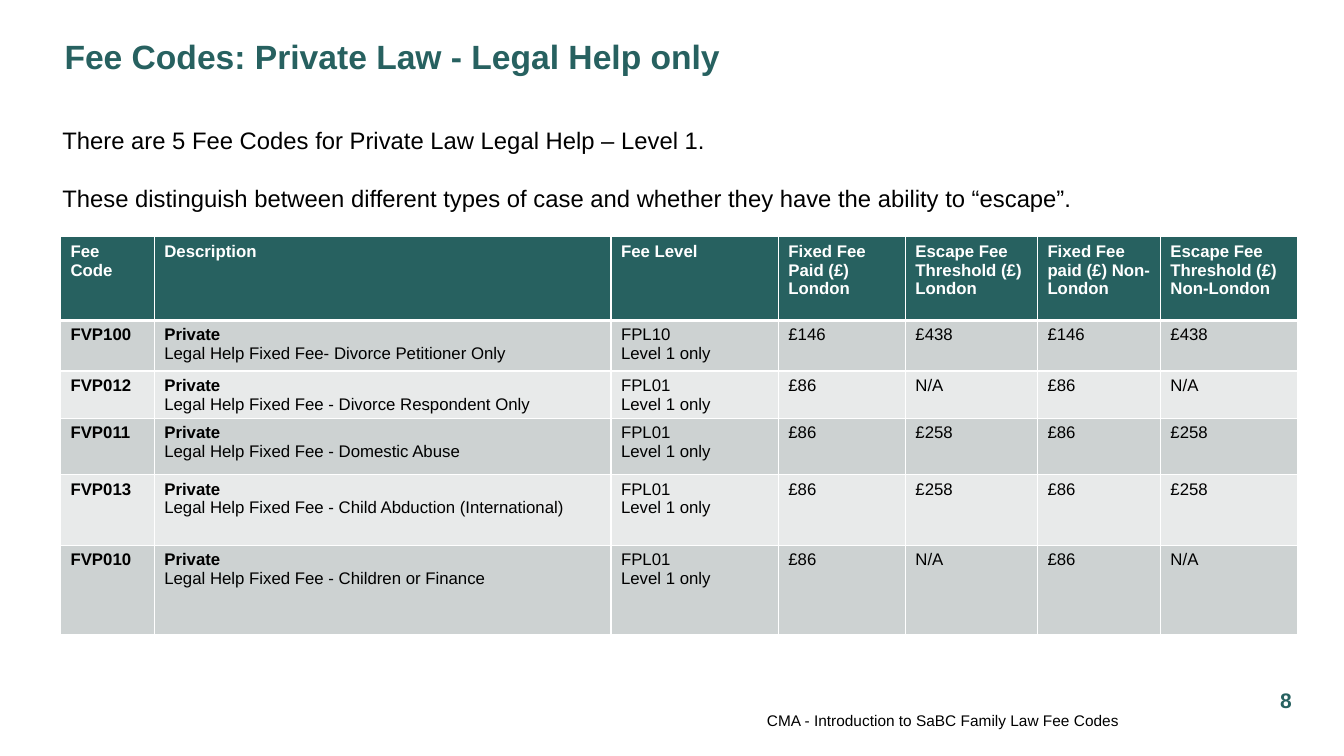
from pptx import Presentation
from pptx.dml.color import RGBColor
from pptx.enum.text import MSO_ANCHOR, PP_ALIGN
from pptx.oxml import parse_xml
from pptx.oxml.ns import nsdecls
from pptx.util import Inches, Pt

TOP, MIDDLE = MSO_ANCHOR.TOP, MSO_ANCHOR.MIDDLE
LEFT, CENTER, RIGHT = PP_ALIGN.LEFT, PP_ALIGN.CENTER, PP_ALIGN.RIGHT

GREEN = RGBColor(0x27, 0x61, 0x60)
BAND_DARK = RGBColor(0xCD, 0xD2, 0xD2)
BAND_LIGHT = RGBColor(0xE8, 0xEA, 0xEA)
WHITE = RGBColor(0xFF, 0xFF, 0xFF)
BLACK = RGBColor(0, 0, 0)

COL_WIDTHS = [0.93, 4.53, 1.66, 1.26, 1.31, 1.22, 1.36]
ROW_HEIGHTS = [0.83, 0.5, 0.46, 0.56, 0.7, 0.89]
HEADERS = ["Fee Code", "Description", "Fee Level",
           "Fixed Fee Paid (£) London", "Escape Fee Threshold (£) London",
           "Fixed Fee paid (£) Non-London", "Escape Fee Threshold (£) Non-London"]
# Fee code, case type, fee level, fixed fee, escape threshold
FEES = [
    ("FVP100", "Legal Help Fixed Fee- Divorce Petitioner Only", "FPL10", "£146", "£438"),
    ("FVP012", "Legal Help Fixed Fee - Divorce Respondent Only", "FPL01", "£86", "N/A"),
    ("FVP011", "Legal Help Fixed Fee - Domestic Abuse", "FPL01", "£86", "£258"),
    ("FVP013", "Legal Help Fixed Fee - Child Abduction (International)", "FPL01", "£86", "£258"),
    ("FVP010", "Legal Help Fixed Fee - Children or Finance", "FPL01", "£86", "N/A"),
]


class SlideBuilder:
    font = "Arial"

    def __init__(self, prs):
        self.s = prs.slides.add_slide(prs.slide_layouts[6])

    def fill_text(self, tf, lines, size, color=BLACK, bolds=(False,), **para):
        """Fill a text frame; the last value in bolds applies to any further lines."""
        for i, line in enumerate(lines):
            p = tf.paragraphs[0] if i == 0 else tf.add_paragraph()
            for name, value in para.items():
                setattr(p, name, value)
            r = p.add_run()
            r.text = line
            style = {"name": self.font, "size": Pt(size), "bold": bolds[min(i, len(bolds) - 1)]}
            for name, value in style.items():
                setattr(r.font, name, value)
            r.font.color.rgb = color

    def text(self, box, lines, size, anchor=MIDDLE, margins=(0, 0), **style):
        sp = self.s.shapes.add_textbox(*map(Inches, box))
        tf = sp.text_frame
        x, y = map(Inches, margins)
        frame = {"word_wrap": True, "vertical_anchor": anchor, "margin_left": x,
                 "margin_right": x, "margin_top": y, "margin_bottom": y}
        for name, value in frame.items():
            setattr(tf, name, value)
        self.fill_text(tf, lines, size, **style)

    def borders(self, cell, **widths):
        tc_pr = cell._tc.get_or_add_tcPr()
        for i, side in enumerate("LRTB"):
            tc_pr.insert(i, parse_xml(
                f'<a:ln{side} {nsdecls("a")} w="{Pt(widths.get(side, 1))}">'
                f'<a:solidFill><a:srgbClr val="{WHITE}"/></a:solidFill></a:ln{side}>'))

    def cell(self, cell, lines, fill, widths, **style):
        cell.fill.solid()
        cell.fill.fore_color.rgb = fill
        cell.margin_bottom = Inches(0.02)
        self.fill_text(cell.text_frame, lines, 12, **style)
        self.borders(cell, **widths)

    def table(self, left, top, headers, rows):
        size = sum(COL_WIDTHS), sum(ROW_HEIGHTS)
        table = self.s.shapes.add_table(len(rows) + 1, len(headers),
                                        *map(Inches, (left, top, *size))).table
        table.horz_banding = False
        for col, width in zip(table.columns, COL_WIDTHS):
            col.width = Inches(width)
        for row, height in zip(table.rows, ROW_HEIGHTS):
            row.height = Inches(height)
        for c, label in enumerate(headers):
            self.cell(table.cell(0, c), [label], GREEN, {"B": 3}, color=WHITE, bolds=(True,))
        for r, values in enumerate(rows, 1):
            fill = BAND_DARK if r % 2 else BAND_LIGHT
            widths = {"T": 3} if r == 1 else {}
            for c, lines in enumerate(values):
                # Code and the first description line are bold
                self.cell(table.cell(r, c), lines, fill, widths, bolds=(c < 2, False))


def main():
    prs = Presentation()
    prs.slide_width, prs.slide_height = Inches(13.33), Inches(7.5)
    slide = SlideBuilder(prs)

    # Title
    slide.text((0.64, 0.26, 11.73, 0.59), ["Fee Codes: Private Law - Legal Help only"], 24,
               color=GREEN, bolds=(True,), alignment=LEFT)

    # Footer and page number
    slide.text((3.22, 7.05, 7.88, 0.2), ["CMA - Introduction to SaBC Family Law Fee Codes"], 11,
               alignment=RIGHT)
    slide.text((12.51, 6.75, 0.49, 0.4), ["8"], 15, color=GREEN, bolds=(True,),
               alignment=CENTER)

    # Fee table: London and non-London amounts are the same
    rows = [([code], ["Private", case], [level, "Level 1 only"], *([[fee], [escape]] * 2))
            for code, case, level, fee, escape in FEES]
    slide.table(0.6, 2.35, HEADERS, rows)

    # Introduction
    slide.text((0.52, 1.18, 12.24, 0.96),
               ["There are 5 Fee Codes for Private Law Legal Help – Level 1.",
                "These distinguish between different types of case and whether they have "
                "the ability to “escape”."],
               17, anchor=TOP, margins=(0.1, 0.05), line_spacing=1.05, space_after=Pt(20.5))

    prs.save("out.pptx")


if __name__ == "__main__":
    main()
